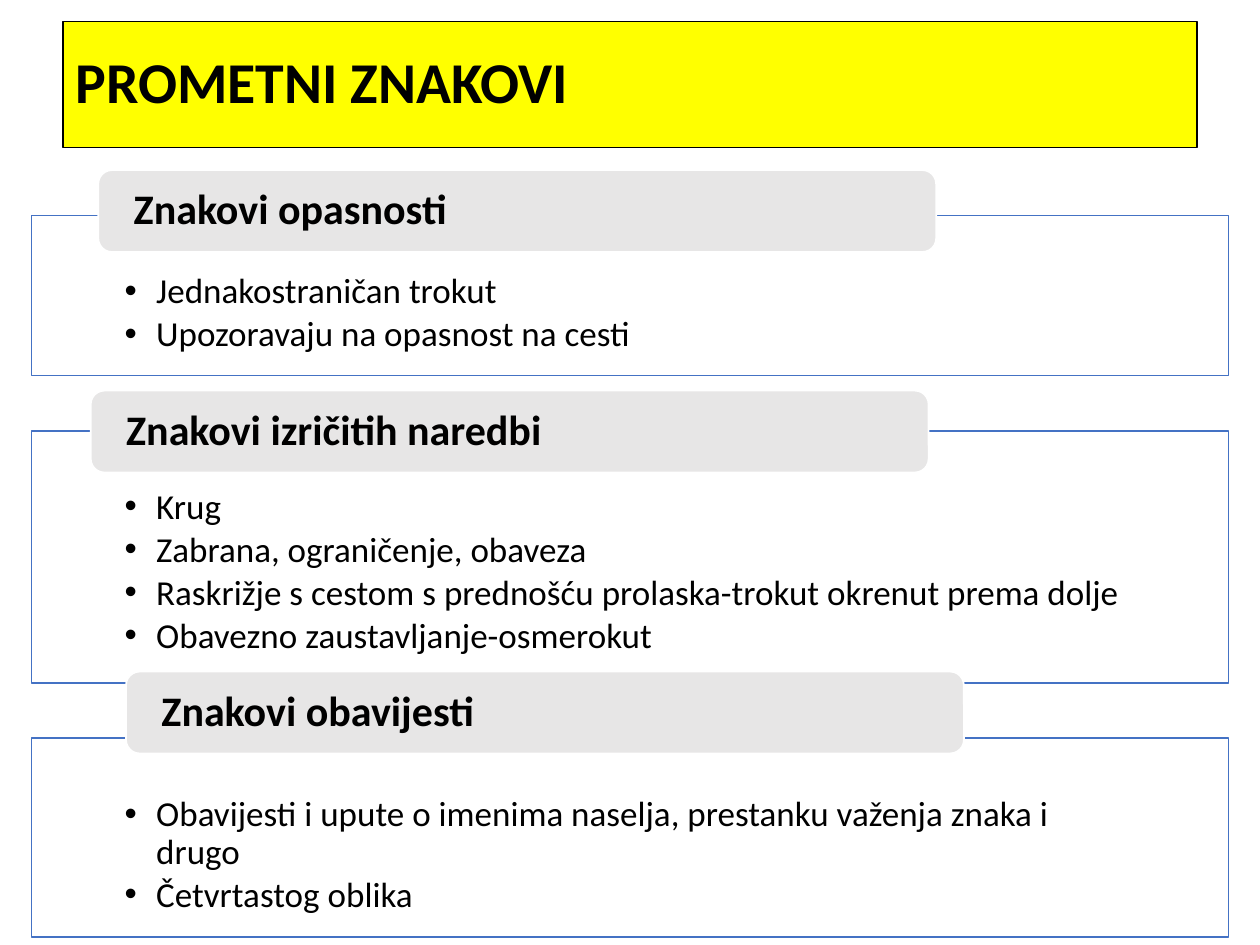
from pptx import Presentation
from pptx.dml.color import RGBColor
from pptx.enum.shapes import MSO_SHAPE as Shape
from pptx.enum.text import MSO_ANCHOR as Anchor, MSO_AUTO_SIZE as Fit, PP_ALIGN as Align
from pptx.oxml.ns import qn
from pptx.util import Inches, Pt
from lxml.etree import SubElement as Sub

BLACK = RGBColor(0, 0, 0)
WHITE = RGBColor(255, 255, 255)
YELLOW = RGBColor(255, 255, 0)
BLUE = RGBColor(0x44, 0x72, 0xC4)
GRAY = RGBColor(0xE7, 0xE6, 0xE6)

SIGNS = [
    ("Znakovi opasnosti", 0.78, 1.35, 1.71, 1.27,
     ["Jednakostraničan trokut", "Upozoravaju na opasnost na cesti"]),
    ("Znakovi izričitih naredbi", 0.72, 3.1, 3.42, 2,
     ["Krug", "Zabrana, ograničenje, obaveza",
      "Raskrižje s cestom s prednošću prolaska-trokut okrenut prema dolje",
      "Obavezno zaustavljanje-osmerokut"]),
    ("Znakovi obavijesti", 1, 5.33, 5.86, 1.58,
     ["Obavijesti i upute o imenima naselja, prestanku važenja znaka i drugo",
      "Četvrtastog oblika"]),
]


def paint(shape, fill, line, width):
    shape.fill.solid()
    shape.fill.fore_color.rgb = fill
    shape.line.color.rgb = line
    shape.line.width = Pt(width)


def inset(frame, left, top, right, bottom):
    frame.margin_left, frame.margin_top = Inches(left), Inches(top)
    frame.margin_right, frame.margin_bottom = Inches(right), Inches(bottom)


def write(para, text, size, bold=False):
    para.alignment = Align.LEFT
    para.line_spacing = 0.9
    run = para.add_run()
    run.text = text
    font = run.font
    font.name, font.size, font.bold = "Calibri", Pt(size), bold
    font.color.rgb = BLACK


def bullet(para):
    para.level = 1
    para.space_after = Pt(3)
    props = para._p.get_or_add_pPr()
    props.set("marL", str(Inches(0.25)))
    props.set("indent", str(Inches(-0.25)))
    Sub(props, qn("a:buFont"), typeface="Arial")
    Sub(props, qn("a:buChar"), char="•")


def add_title(slide):
    title = slide.shapes.title
    title.left, title.top = Inches(0.5), Inches(0.17)
    title.width, title.height = Inches(9), Inches(1)
    paint(title, YELLOW, BLACK, 0.75)
    frame = title.text_frame
    frame.auto_size = Fit.NONE
    frame.vertical_anchor = Anchor.MIDDLE
    write(frame.paragraphs[0], "PROMETNI ZNAKOVI", 33, True)


def add_box(slide, kind, left, top, width, height, fill, line):
    box = slide.shapes.add_shape(
        kind, Inches(left), Inches(top), Inches(width), Inches(height))
    box.shadow.inherit = False
    paint(box, fill, line, 1)
    box.text_frame.word_wrap = True
    return box


def add_list(slide, top, height, items):
    box = add_box(slide, Shape.RECTANGLE, 0.25, top, 9.5, height, WHITE, BLUE)
    color = box.fill._xPr.find(qn("a:solidFill"))[0]
    Sub(color, qn("a:alpha"), val="90000")
    frame = box.text_frame
    frame.vertical_anchor = Anchor.TOP
    inset(frame, 0.74, 0.46, 0.74, 0.16)
    for i, item in enumerate(items):
        para = frame.add_paragraph() if i else frame.paragraphs[0]
        write(para, item, 20)
        bullet(para)


def add_label(slide, text, left, top):
    box = add_box(slide, Shape.ROUNDED_RECTANGLE, left, top, 6.65, 0.65, GRAY, WHITE)
    frame = box.text_frame
    frame.vertical_anchor = Anchor.MIDDLE
    inset(frame, 0.25, 0, 0.25, 0)
    write(frame.paragraphs[0], text, 24, True)


def main():
    deck = Presentation()
    deck.slide_width, deck.slide_height = Inches(10), Inches(7.5)
    slide = deck.slides.add_slide(deck.slide_layouts[5])
    add_title(slide)
    for name, left, head, top, height, items in SIGNS:
        add_list(slide, top, height, items)
        add_label(slide, name, left, head)
    deck.save("out.pptx")


if __name__ == "__main__":
    main()
